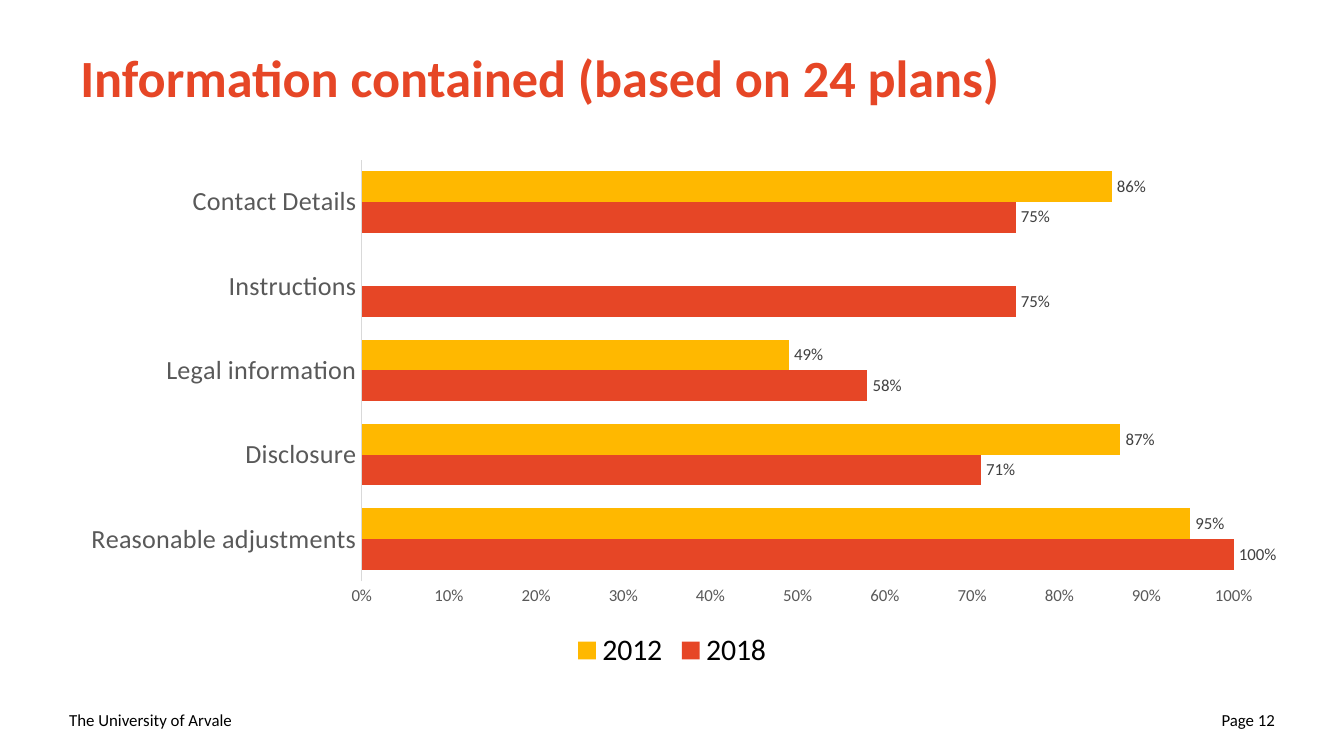
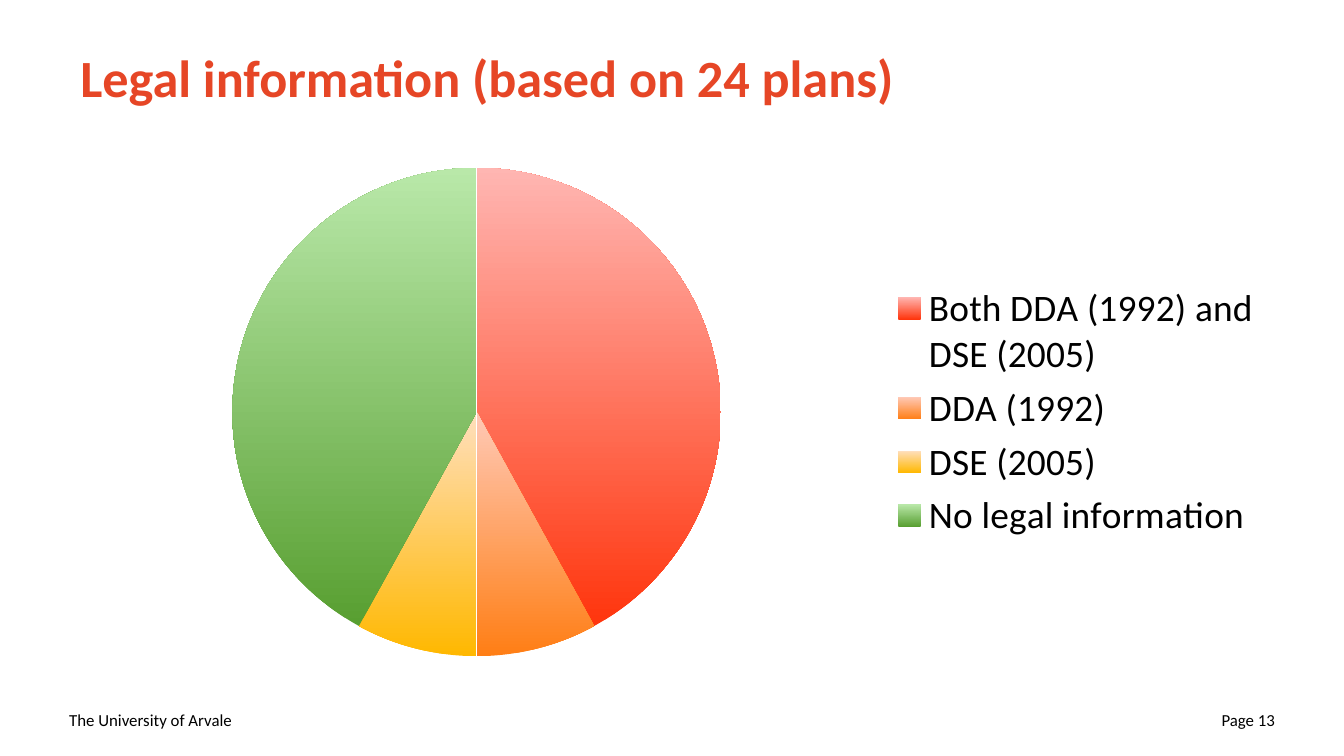
from dataclasses import dataclass

from pptx import Presentation
from pptx.chart.chart import Chart
from pptx.chart.data import CategoryChartData
from pptx.dml.color import RGBColor
from pptx.enum import chart as ch, text
from pptx.slide import Slide
from pptx.util import Length, Pt


@dataclass(frozen=True)
class Theme:
    font: str = "Calibri"
    red: str = "E64626"
    yellow: str = "FFB800"
    black: str = "000000"
    axis_text: str = "595959"
    label_text: str = "404040"
    axis_line: str = "D9D9D9"
    title_size: int = 28
    small_size: int = 9
    chart_size: int = 10
    category_size: int = 14
    bar_legend_size: int = 16
    pie_legend_size: int = 20


@dataclass(frozen=True)
class Box:
    left: float
    top: float
    width: float
    height: float

    def lengths(self) -> tuple[Length, ...]:
        return Pt(self.left), Pt(self.top), Pt(self.width), Pt(self.height)


@dataclass(frozen=True)
class YearSeries:
    year: str
    shares: tuple
    color: str


@dataclass(frozen=True)
class Slice:
    category: str
    percent: int
    dark: str
    light: str


THEME = Theme()
PAGE_WIDTH, PAGE_HEIGHT = 720, 405
ORGANISATION = "The University of Arvale"

# Shared frame
TITLE_BOX = Box(36, 7.2, 648, 67.7)
CHART_BOX = Box(36, 80, 648, 281.5)
FOOTER_BOX = Box(30, 375, 168, 21.6)
PAGE_BOX = Box(PAGE_WIDTH - 30 - 168, 375, 168, 21.6)

# Chart content
TOPICS = ("Reasonable adjustments", "Disclosure", "Legal information",
          "Instructions", "Contact Details")
YEARS = (
    YearSeries("2018", (1, 0.71, 0.58, 0.75, 0.75), THEME.red),
    YearSeries("2012", (0.95, 0.87, 0.49, None, 0.86), THEME.yellow),
)
SLICES = (
    Slice("Both DDA (1992) and DSE (2005)", 42, "FF350D", "FFB6B2"),
    Slice("DDA (1992)", 8, "FF7E15", "FFC9B6"),
    Slice("DSE (2005)", 8, "FFB800", "FFDFBD"),
    Slice("No legal information", 42, "589F31", "B9E8A9"),
)


def style_font(font, size: float, color: str, bold: bool = False) -> None:
    font.name = THEME.font
    font.size = Pt(size)
    font.bold = bold
    font.color.rgb = RGBColor.from_string(color)


def add_line_of_text(slide: Slide, box: Box, wording: str, size: float,
                     color: str, bold: bool = False,
                     align=text.PP_ALIGN.LEFT) -> None:
    frame = slide.shapes.add_textbox(*box.lengths()).text_frame
    frame.word_wrap = True
    frame.vertical_anchor = text.MSO_ANCHOR.MIDDLE
    paragraph = frame.paragraphs[0]
    paragraph.alignment = align
    run = paragraph.add_run()
    run.text = wording
    style_font(run.font, size, color, bold)


def add_framed_slide(prs, title: str, page: int) -> Slide:
    """Add a slide with its footer, page number and title."""
    slide = prs.slides.add_slide(prs.slide_layouts[6])
    add_line_of_text(slide, FOOTER_BOX, ORGANISATION,
                     THEME.small_size, THEME.black)
    add_line_of_text(slide, PAGE_BOX, f"Page {page}", THEME.small_size,
                     THEME.black, align=text.PP_ALIGN.RIGHT)
    add_line_of_text(slide, TITLE_BOX, title, THEME.title_size,
                     THEME.red, bold=True)
    return slide


def add_legend_chart(slide: Slide, kind, data: CategoryChartData,
                     legend_position, legend_size: float) -> Chart:
    chart = slide.shapes.add_chart(kind, *CHART_BOX.lengths(), data).chart
    style_font(chart.font, THEME.chart_size, THEME.black)
    chart.has_title = False
    chart.has_legend = True
    chart.legend.position = legend_position
    chart.legend.include_in_layout = False
    style_font(chart.legend.font, legend_size, THEME.black)
    return chart


def style_axis(axis, size: float) -> None:
    axis.has_major_gridlines = False
    axis.major_tick_mark = ch.XL_TICK_MARK.NONE
    axis.minor_tick_mark = ch.XL_TICK_MARK.NONE
    style_font(axis.tick_labels.font, size, THEME.axis_text)


def add_information_chart(slide: Slide) -> None:
    data = CategoryChartData(number_format="0%")
    data.categories = TOPICS
    for entry in YEARS:
        data.add_series(entry.year, entry.shares)
    chart = add_legend_chart(slide, ch.XL_CHART_TYPE.BAR_CLUSTERED, data,
                             ch.XL_LEGEND_POSITION.BOTTOM,
                             THEME.bar_legend_size)

    # Axes
    topics, shares = chart.category_axis, chart.value_axis
    style_axis(topics, THEME.category_size)
    topics.format.line.color.rgb = RGBColor.from_string(THEME.axis_line)
    topics.format.line.width = Pt(0.75)
    style_axis(shares, THEME.small_size)
    shares.format.line.fill.background()
    shares.minimum_scale, shares.maximum_scale = 0, 1
    shares.major_unit = 0.1
    shares.tick_labels.number_format = "0%"
    shares.tick_labels.number_format_is_linked = False

    # Bars and their labels
    plot = chart.plots[0]
    plot.gap_width = 75
    plot.overlap = 0
    plot.vary_by_categories = False
    for bars, entry in zip(plot.series, YEARS):
        bars.invert_if_negative = False
        bars.format.fill.solid()
        bars.format.fill.fore_color.rgb = RGBColor.from_string(entry.color)
        labels = bars.data_labels
        labels.show_value = True
        labels.number_format = "0%"
        labels.number_format_is_linked = False
        labels.position = ch.XL_LABEL_POSITION.OUTSIDE_END
        style_font(labels.font, THEME.small_size, THEME.label_text)


def add_legal_chart(slide: Slide) -> None:
    data = CategoryChartData()
    data.categories = [part.category for part in SLICES]
    data.add_series("Series 1", [part.percent for part in SLICES])
    chart = add_legend_chart(slide, ch.XL_CHART_TYPE.PIE, data,
                             ch.XL_LEGEND_POSITION.RIGHT,
                             THEME.pie_legend_size)
    plot = chart.plots[0]
    plot.vary_by_categories = True

    # Slices fade from dark at the bottom to light at the top
    for index, part in enumerate(SLICES):
        look = plot.series[0].points[index].format
        look.line.fill.background()
        look.fill.gradient()
        look.fill.gradient_angle = 90
        for stop, color in zip(look.fill.gradient_stops,
                               (part.dark, part.light)):
            stop.color.rgb = RGBColor.from_string(color)


def main() -> None:
    prs = Presentation()
    prs.slide_width, prs.slide_height = Pt(PAGE_WIDTH), Pt(PAGE_HEIGHT)
    add_information_chart(add_framed_slide(
        prs, "Information contained (based on 24 plans)", 12))
    add_legal_chart(add_framed_slide(
        prs, "Legal information (based on 24 plans)", 13))
    prs.save("out.pptx")


if __name__ == "__main__":
    main()
